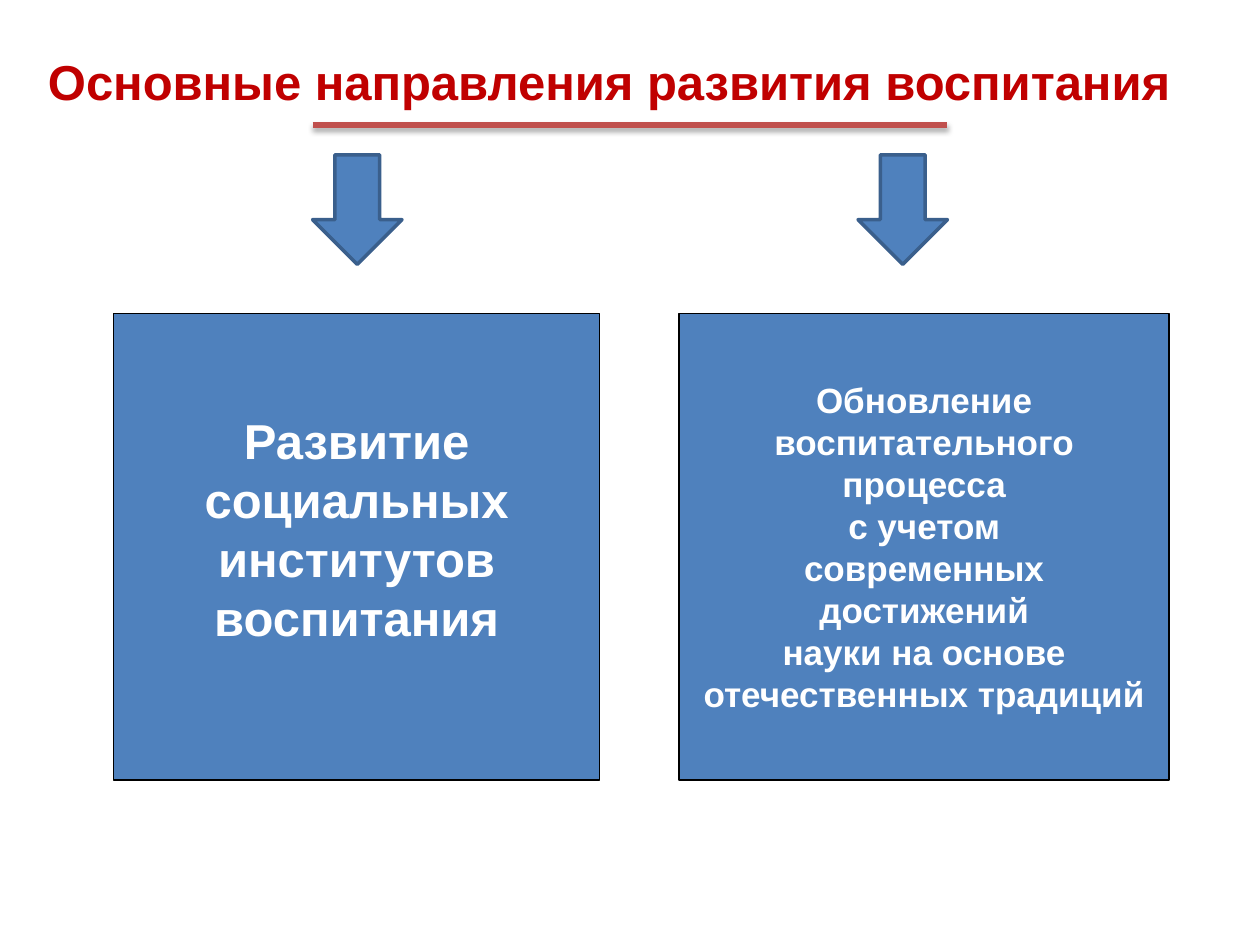
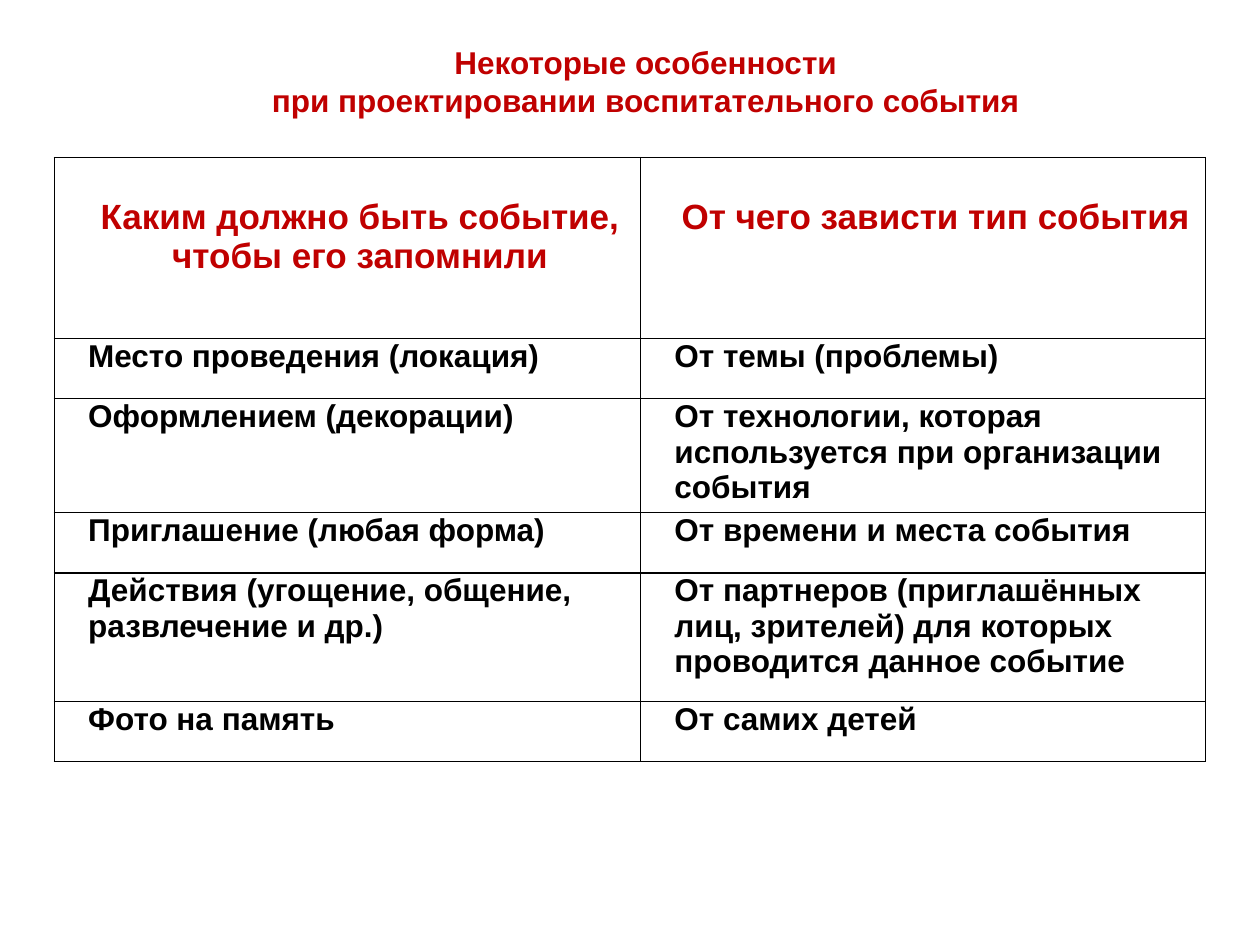
import lxml.etree
import pptx
import pptx.dml.color
import pptx.enum.shapes
import pptx.enum.text
import pptx.oxml.ns
import pptx.util

Pt = pptx.util.Pt
SHAPES = pptx.enum.shapes.MSO_SHAPE
LEFT = pptx.enum.text.PP_ALIGN.LEFT
CENTER = pptx.enum.text.PP_ALIGN.CENTER
TOP = pptx.enum.text.MSO_ANCHOR.TOP
MIDDLE = pptx.enum.text.MSO_ANCHOR.MIDDLE

FONT = "Arial"
RED = "C00000"
RULE_RED = "C0504D"
BLUE = "4F81BD"
DARK_BLUE = "3A5F8C"
BLACK = "000000"
WHITE = "FFFFFF"

DIRECTIONS = [
    (64.8, 278, 28, 24.6, ["Развитие", "социальных", "институтов", "воспитания"]),
    (388.1, 280, 20, 3.6, [
        "Обновление", "воспитательного", "процесса", "с учетом",
        "современных", "достижений", "науки на основе", "отечественных традиций",
    ]),
]
ARROW_LEFTS = [178.6, 490.3]

EVENT_COLUMNS = [335, 323]
EVENT_ROWS = [
    (103.4, "Каким должно быть событие, чтобы его запомнили", "От чего зависти тип события"),
    (34.4, "Место проведения (локация)", "От темы (проблемы)"),
    (65.2, "Оформлением (декорации)",
     "От технологии, которая используется при организации события"),
    (34.4, "Приглашение (любая форма)", "От времени и места события"),
    (73.4, "Действия (угощение, общение, развлечение и др.)",
     "От партнеров (приглашённых лиц, зрителей) для которых проводится данное событие"),
    (34.4, "Фото на память", "От самих детей"),
]


def rgb(value):
    """Turn a hex string into a colour."""
    return pptx.dml.color.RGBColor.from_string(value)


def write(frame, lines, size, color, align=CENTER, leading=1.2):
    """Fill a text frame with bold lines, one paragraph each."""
    frame.text = "\n".join(lines)
    frame.word_wrap = True
    for paragraph in frame.paragraphs:
        paragraph.alignment = align
        paragraph.line_spacing = Pt(size * leading)
        paragraph.space_before = Pt(0)
        paragraph.font.name = FONT
        paragraph.font.size = Pt(size)
        paragraph.font.bold = True
        paragraph.font.color.rgb = rgb(color)


def add_titled_slide(deck, lines, size, box, align):
    """Add a title-only slide with its red heading."""
    slide = deck.slides.add_slide(deck.slide_layouts[5])
    title = slide.shapes.title
    title.left, title.top, title.width, title.height = map(Pt, box)
    write(title.text_frame, lines, size, RED, align)
    title.text_frame.vertical_anchor = TOP
    title.text_frame.auto_size = pptx.enum.text.MSO_AUTO_SIZE.NONE
    return slide


def add_block(slide, kind, box, outline, weight):
    """Add a blue preset shape with an outline."""
    block = slide.shapes.add_shape(kind, *map(Pt, box))
    block.shadow.inherit = False
    block.fill.solid()
    block.fill.fore_color.rgb = rgb(BLUE)
    block.line.color.rgb = rgb(outline)
    block.line.width = Pt(weight)
    return block


def add_title_rule(slide, start, end, height):
    """Draw the red rule below the title with its soft shadow."""
    rule = slide.shapes.add_connector(
        pptx.enum.shapes.MSO_CONNECTOR.STRAIGHT, Pt(start), Pt(height), Pt(end), Pt(height))
    rule.line.color.rgb = rgb(RULE_RED)
    rule.line.width = Pt(3)
    qn = pptx.oxml.ns.qn
    effects = lxml.etree.SubElement(rule._element.spPr, qn("a:effectLst"))
    shadow = lxml.etree.SubElement(
        effects, qn("a:outerShdw"), blurRad=str(Pt(3.1)), dist=str(Pt(1.8)),
        dir="5400000", rotWithShape="0")
    shade = lxml.etree.SubElement(shadow, qn("a:srgbClr"), val=BLACK)
    lxml.etree.SubElement(shade, qn("a:alpha"), val="35000")


def set_borders(cell, weight):
    """Give a cell black borders on all four sides."""
    qn = pptx.oxml.ns.qn
    properties = cell._tc.get_or_add_tcPr()
    for position, side in enumerate(("lnL", "lnR", "lnT", "lnB")):
        border = lxml.etree.Element(qn(f"a:{side}"), w=str(Pt(weight)))
        fill = lxml.etree.SubElement(border, qn("a:solidFill"))
        lxml.etree.SubElement(fill, qn("a:srgbClr"), val=BLACK)
        properties.insert(position, border)


def add_event_table(slide, left, top):
    """Add the two-column table of event features."""
    total_height = sum(row[0] for row in EVENT_ROWS)
    table = slide.shapes.add_table(
        len(EVENT_ROWS), len(EVENT_COLUMNS), Pt(left), Pt(top),
        Pt(sum(EVENT_COLUMNS)), Pt(total_height)).table
    table.horz_banding = False
    for column, width in zip(table.columns, EVENT_COLUMNS):
        column.width = Pt(width)
    for index, (height, *features) in enumerate(EVENT_ROWS):
        table.rows[index].height = Pt(height)
        is_header = index == 0
        size, color, align = (20, RED, CENTER) if is_header else (18, BLACK, LEFT)
        for cell, feature in zip(table.rows[index].cells, features):
            cell.fill.background()
            cell.margin_left, cell.margin_right = Pt(19.4), Pt(5)
            cell.margin_top, cell.margin_bottom = Pt(22.5 if is_header else 0), Pt(0)
            cell.vertical_anchor = TOP
            write(cell.text_frame, [feature], size, color, align, leading=1.13)
            set_borders(cell, 1)


def build_directions(deck):
    """Build the slide on the directions of upbringing."""
    slide = add_titled_slide(
        deck, ["Основные направления развития воспитания"], 28, (20.2, 26, 680, 41), LEFT)
    add_title_rule(slide, 178.6, 541.4, 71.5)
    for left, width, size, bottom_inset, lines in DIRECTIONS:
        direction = add_block(slide, SHAPES.RECTANGLE, (left, 179.3, width, 266.4), BLACK, 0.75)
        write(direction.text_frame, lines, size, WHITE)
        direction.text_frame.vertical_anchor = MIDDLE
        direction.text_frame.margin_bottom = Pt(bottom_inset)
    for left in ARROW_LEFTS:
        add_block(slide, SHAPES.DOWN_ARROW, (left, 88.5, 51.1, 62.6), DARK_BLUE, 2)


def build_event_features(deck):
    """Build the slide on designing an event."""
    slide = add_titled_slide(
        deck, ["Некоторые особенности", "при проектировании воспитательного события"],
        18, (49, 21, 640, 51), CENTER)
    add_event_table(slide, 31, 90)


def main():
    """Build and save the presentation."""
    deck = pptx.Presentation()
    deck.slide_width, deck.slide_height = Pt(720), Pt(540)
    build_directions(deck)
    build_event_features(deck)
    deck.save("out.pptx")


if __name__ == "__main__":
    main()
